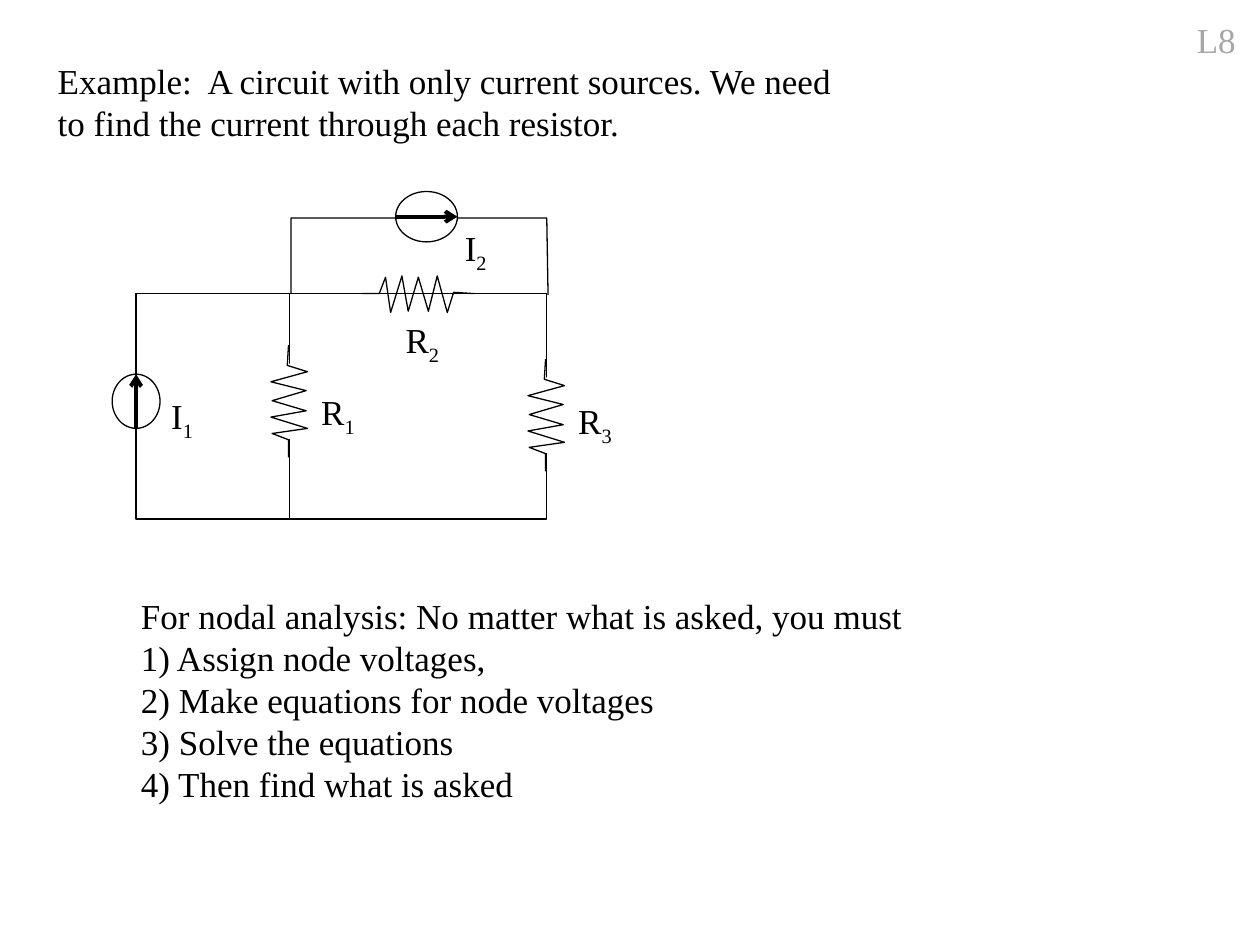
from lxml import etree
from pptx import Presentation
from pptx.dml.color import RGBColor
from pptx.enum.shapes import MSO_CONNECTOR, MSO_SHAPE
from pptx.enum.text import MSO_AUTO_SIZE
from pptx.oxml.ns import qn
from pptx.util import Inches, Pt

STRAIGHT = MSO_CONNECTOR.STRAIGHT
RECTANGLE = MSO_SHAPE.RECTANGLE
OVAL = MSO_SHAPE.OVAL
FIT_SHAPE = MSO_AUTO_SIZE.SHAPE_TO_FIT_TEXT

FONT = "Times New Roman"
BLACK, WHITE, GRAY = "000000", "FFFFFF", "A6A6A6"
THIN, THICK = 0.75, 2.25
LABEL_HEIGHT = 0.44
RESISTOR_WIDTH, RESISTOR_HEIGHT = 0.89, 0.29
ZIGZAG = [(0, 0.14), (0.14, 0.14), (0.19, 0.01), (0.23, 0.29),
          (0.32, 0), (0.37, 0.28), (0.45, 0.01), (0.53, 0.28),
          (0.6, 0), (0.68, 0.29), (0.73, 0.13), (0.89, 0.14)]


def color(value):
    return RGBColor.from_string(value)


def add_text(slide, text, left, top, width, height, *, subscript=None,
             font_color=BLACK, size=20, wrap=False):
    """Split paragraphs at newlines and lines at vertical tabs."""
    box = slide.shapes.add_textbox(Inches(left), Inches(top),
                                   Inches(width), Inches(height))
    frame = box.text_frame
    frame.text = text
    frame.word_wrap = wrap
    frame.auto_size = FIT_SHAPE
    if subscript:
        run = frame.paragraphs[0].add_run()
        run.text = subscript
        run._r.get_or_add_rPr().set("baseline", "-25000")
    for paragraph in frame.paragraphs:
        paragraph.font.size = Pt(size)
        for run in paragraph.runs:
            run.font.name = FONT
            run.font.size = Pt(size)
            run.font.color.rgb = color(font_color)


def style_shape(shape, fill=None, line=BLACK):
    shape.shadow.inherit = False
    if fill:
        shape.fill.solid()
        shape.fill.fore_color.rgb = color(fill)
    else:
        shape.fill.background()
    if line:
        shape.line.color.rgb = color(line)
        shape.line.width = Pt(THIN)
    else:
        shape.line.fill.background()


def add_box(slide, kind, left, top, width, height, fill=None, line=BLACK):
    shape = slide.shapes.add_shape(kind, Inches(left), Inches(top),
                                   Inches(width), Inches(height))
    style_shape(shape, fill, line)
    return shape


def add_path(slide, left, top, points):
    corners = [(Inches(left + x), Inches(top + y)) for x, y in points]
    builder = slide.shapes.build_freeform(*corners[0])
    builder.add_line_segments(corners[1:], close=False)
    shape = builder.convert_to_shape()
    style_shape(shape)
    return shape


def add_line(slide, start, end, width=THIN, arrow=False):
    line = slide.shapes.add_connector(
        STRAIGHT, *(Inches(value) for value in (*start, *end)))
    line.line.color.rgb = color(BLACK)
    line.line.width = Pt(width)
    if arrow:
        etree.SubElement(line.line._get_or_add_ln(), qn("a:tailEnd"), type="arrow")
    etree.SubElement(line._element.spPr, qn("a:effectLst"))


def add_resistor(slide, left, top, vertical=False):
    """Draw a zigzag; a vertical one hides the wire behind it."""
    if vertical:
        width, height = 0.6, 0.27
        mask = add_box(slide, RECTANGLE, left + (RESISTOR_WIDTH - width) / 2,
                       top + (RESISTOR_HEIGHT - height) / 2, width, height,
                       fill=WHITE, line=None)
        mask.rotation = 270
    zigzag = add_path(slide, left, top, ZIGZAG)
    if vertical:
        zigzag.rotation = 270


def add_current_source(slide, left, top, width, height, upward=False):
    add_box(slide, OVAL, left, top, width, height, fill=WHITE)
    center_x, center_y = left + width / 2, top + height / 2
    if upward:
        start, end = (center_x, top + height), (center_x, top)
    else:
        start, end = (left, center_y), (left + width, center_y)
    add_line(slide, start, end, THICK, arrow=True)


def add_circuit(slide, left, top, width, height):
    """Draw the circuit around its main loop, which fills the given box."""
    add_box(slide, RECTANGLE, left, top, width, height)
    branch = left + 1.22
    add_line(slide, (branch, top), (branch, top + height))
    add_path(slide, left, top, [(1.23, 0), (1.23, -0.6),
                                (width, -0.6), (width + 0.01, 0.01)])
    for x, y, vertical in [(1.79, -0.14, False), (2.81, 0.82, True),
                           (0.77, 0.71, True)]:
        add_resistor(slide, left + x, top + y, vertical)
    add_current_source(slide, left + 2.06, top - 0.81, 0.49, 0.4)
    add_current_source(slide, left - 0.19, top + 0.64, 0.38, 0.43, upward=True)
    for letter, number, x, y, label_width in [
            ("R", "1", 1.37, 0.72, 0.48), ("R", "3", 3.41, 0.79, 0.48),
            ("R", "2", 2.04, 0.15, 0.48), ("I", "2", 2.51, -0.58, 0.39),
            ("I", "1", 0.18, 0.75, 0.39)]:
        add_text(slide, letter, left + x, top + y, label_width, LABEL_HEIGHT,
                 subscript=number)


def main():
    presentation = Presentation()
    presentation.slide_width = Inches(10)
    presentation.slide_height = Inches(7.5)
    slide = presentation.slides.add_slide(presentation.slide_layouts[6])
    add_text(slide, "Example:  A circuit with only current sources. We need \v"
             "to find the current through each resistor.",
             0.36, 0.42, 6.46, 0.77)
    add_circuit(slide, 1.08, 2.33, 3.26, 1.79)
    add_text(slide, "L8", 9.4, 0.1, 0.51, LABEL_HEIGHT, font_color=GRAY)
    add_text(slide, "For nodal analysis: No matter what is asked, you must\n"
             "1) Assign node voltages,\n"
             "2) Make equations for node voltages\n"
             "3) Solve the equations\n"
             "4) Then find what is asked", 1.02, 4.67, 6.35, 1.78)
    presentation.save("out.pptx")


if __name__ == "__main__":
    main()
